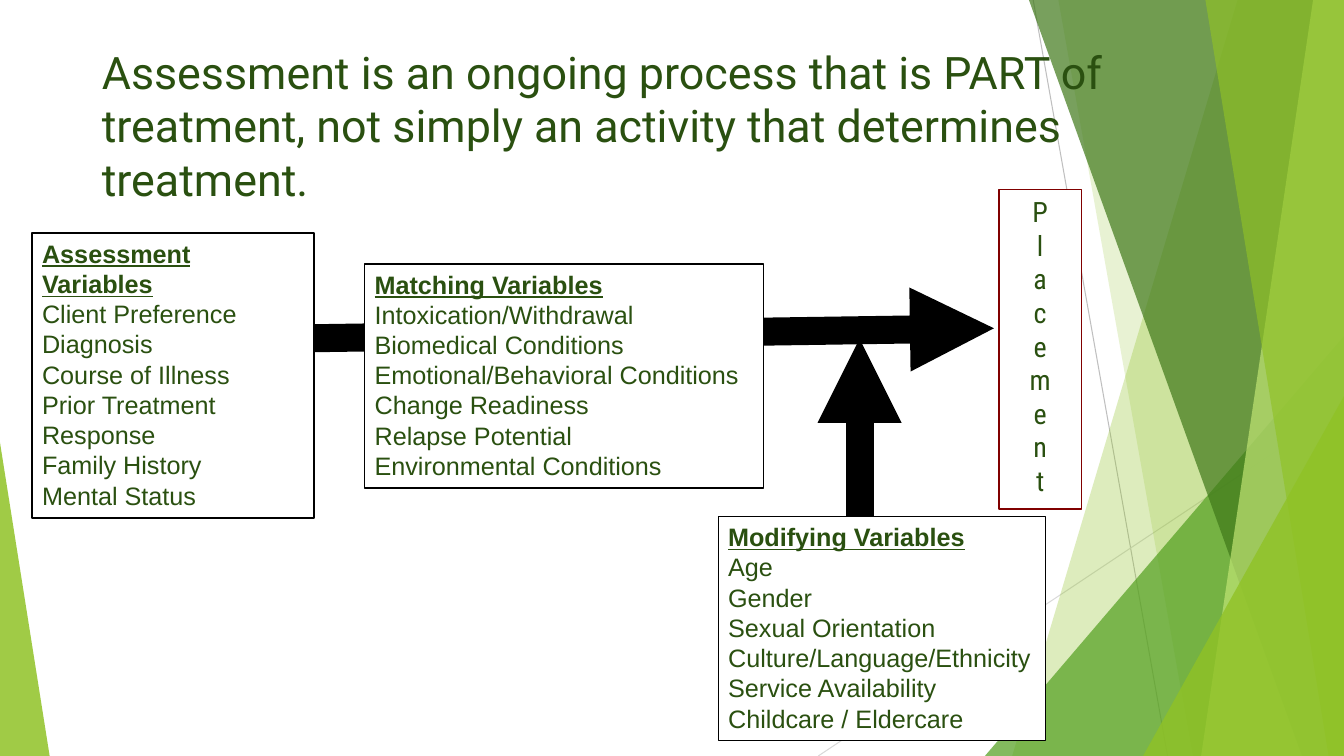
from lxml import etree
from pptx import Presentation
from pptx.dml.color import RGBColor
from pptx.enum.shapes import MSO_CONNECTOR, MSO_SHAPE
from pptx.enum.text import MSO_ANCHOR, MSO_AUTO_SIZE, PP_ALIGN
from pptx.oxml.ns import qn
from pptx.util import Pt

STRAIGHT = MSO_CONNECTOR.STRAIGHT
RECT, TRIANGLE = MSO_SHAPE.RECTANGLE, MSO_SHAPE.ISOSCELES_TRIANGLE
TOP = MSO_ANCHOR.TOP
NO_FIT, GROW = MSO_AUTO_SIZE.NONE, MSO_AUTO_SIZE.SHAPE_TO_FIT_TEXT
LEFT, CENTER = PP_ALIGN.LEFT, PP_ALIGN.CENTER
WIDE, HIGH = 960, 540
INK, BLACK, WHITE, LIME = "2A5010", "000000", "FFFFFF", "90C226"


def color(code):
    """Return the colour for a hex string."""
    return RGBColor.from_string(code)


def paint(shape, code, alpha=100):
    """Fill a shape, with opacity in percent, and drop its shadow."""
    shape.shadow.inherit = False
    shape.fill.solid()
    shape.fill.fore_color.rgb = color(code)
    if alpha < 100:
        tone = shape.fill._xPr.find(".//" + qn("a:srgbClr"))
        etree.SubElement(tone, qn("a:alpha")).set("val", str(alpha * 1000))


def write(frame, lines, size=18, font="Arial", align=LEFT, head=False, fit=NO_FIT):
    """Write one paragraph per line, with an optional bold underlined head."""
    frame.word_wrap = True
    frame.auto_size = fit
    frame.vertical_anchor = TOP
    for i, line in enumerate(lines):
        para = frame.paragraphs[0] if i == 0 else frame.add_paragraph()
        para.alignment = align
        run = para.add_run()
        run.text = line
        run.font.size = Pt(size)
        run.font.name = font
        run.font.color.rgb = color(INK)
        run.font.bold = run.font.underline = head and i == 0


def stroke(slide, start, end, code, width, arrow=False):
    """Draw a straight line, with an arrowhead at its end if asked."""
    line = slide.shapes.add_connector(STRAIGHT, *map(Pt, start + end))
    line.line.color.rgb = color(code)
    line.line.width = Pt(width)
    if arrow:
        tip = etree.SubElement(line.line._get_or_add_ln(), qn("a:tailEnd"))
        tip.set("type", "triangle")
    etree.SubElement(line.element.spPr, qn("a:effectLst"))


def facet(slide, top, foot, code, alpha):
    """Draw a full-height band from a slanted edge to the right margin."""
    pen = slide.shapes.build_freeform(top, 0, scale=Pt(1))
    pen.add_line_segments([(WIDE, 0), (WIDE, HIGH), (foot, HIGH)])
    band = pen.convert_to_shape()
    paint(band, code, alpha)
    band.line.fill.background()


def wedge(slide, left, top, width, apex, code, alpha):
    """Draw a triangle that stands on the lower edge of the slide."""
    shape = slide.shapes.add_shape(
        TRIANGLE, Pt(left), Pt(top), Pt(width), Pt(HIGH - top))
    shape.adjustments[0] = apex
    paint(shape, code, alpha)
    shape.line.fill.background()


def backdrop(slide):
    """Draw the green facets and thin lines behind the content."""
    stroke(slide, (738, 0), (834, HIGH), "BFBFBF", 0.75)
    stroke(slide, (WIDE, 290), (584.5, HIGH), "D9D9D9", 0.75)
    facet(slide, 884, 723, LIME, 30)
    facet(slide, 756, 852, LIME, 20)
    wedge(slide, 703.5, 240, 256.5, 1, "54A021", 72)
    facet(slide, 735, 929.5, "3F7819", 70)
    facet(slide, 938, 858, "C0E474", 70)
    facet(slide, 861, 949, LIME, 65)
    wedge(slide, 816.5, 283, 143.5, 1, LIME, 80)
    wedge(slide, 0, 316, 35.5, 0, LIME, 85)


def heading(slide, box, text):
    """Place the title above the backdrop."""
    title = slide.shapes.title
    title.left, title.top, title.width, title.height = map(Pt, box)
    write(title.text_frame, [text], size=32, font="Roboto")
    title.element.getparent().append(title.element)


def panel(slide, box, lines, edge=BLACK, **style):
    """Draw a white outlined box that holds lines of text."""
    shape = slide.shapes.add_shape(RECT, *map(Pt, box))
    paint(shape, WHITE)
    shape.line.color.rgb = color(edge)
    shape.line.width = Pt(1)
    write(shape.text_frame, lines, **style)


def diagram(slide):
    """Draw the arrows and the boxes of variables that lead to placement."""
    stroke(slide, (196.5, 242), (710, 234.5), BLACK, 20, arrow=True)
    stroke(slide, (614, 415.5), (614, 242), BLACK, 20, arrow=True)
    panel(slide, (713.5, 135.5, 59, 228), "Placement", edge="800000",
          size=20, font="Roboto Condensed", align=CENTER)
    groups = [
        ((260.5, 188.5, 285, 160),
         ["Matching Variables", "Intoxication/Withdrawal",
          "Biomedical Conditions", "Emotional/Behavioral Conditions",
          "Change Readiness", "Relapse Potential",
          "Environmental Conditions"]),
        ((513, 369, 234, 160),
         ["Modifying Variables", "Age", "Gender", "Sexual Orientation",
          "Culture/Language/Ethnicity", "Service Availability",
          "Childcare / Eldercare"]),
        ((23, 166.5, 201.5, 203.5),
         ["Assessment Variables", "Client Preference", "Diagnosis",
          "Course of Illness", "Prior Treatment Response",
          "Family History", "Mental Status"]),
    ]
    for box, lines in groups:
        panel(slide, box, lines, head=True, fit=GROW)


def main():
    """Build the slide and save it."""
    deck = Presentation()
    deck.slide_width, deck.slide_height = Pt(WIDE), Pt(HIGH)
    slide = deck.slides.add_slide(deck.slide_layouts[5])
    backdrop(slide)
    heading(slide, (65.5, 28, 828, 98),
            "Assessment is an ongoing process that is PART of treatment, "
            "not simply an activity that determines treatment.")
    diagram(slide)
    deck.save("out.pptx")


if __name__ == "__main__":
    main()
